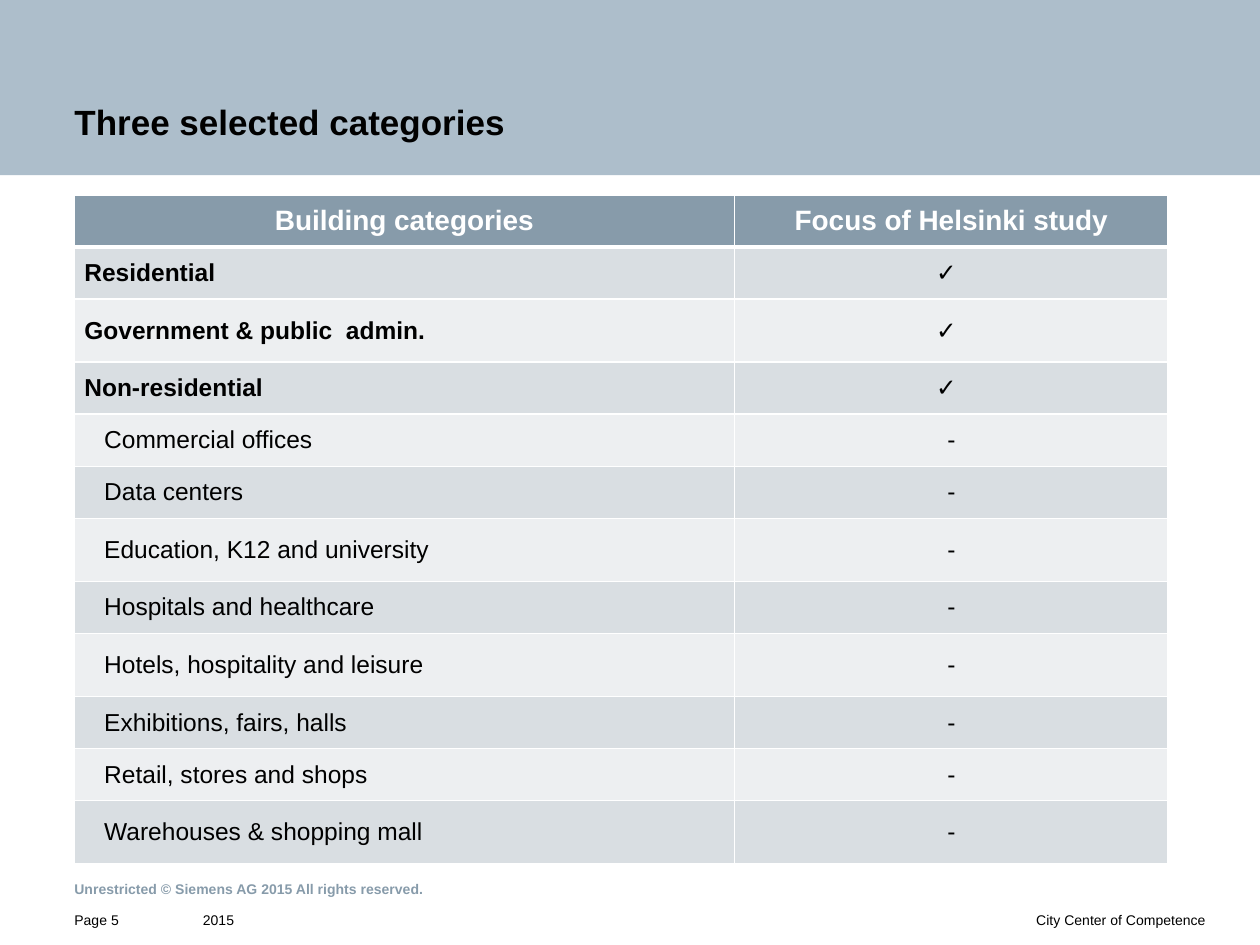
from lxml import etree
from pptx import Presentation
from pptx.dml.color import RGBColor
from pptx.enum.shapes import MSO_SHAPE
from pptx.enum.text import MSO_ANCHOR, MSO_AUTO_SIZE, PP_ALIGN
from pptx.oxml.ns import qn
from pptx.util import Cm, Pt

RECTANGLE = MSO_SHAPE.RECTANGLE
TOP, MIDDLE, BOTTOM = MSO_ANCHOR.TOP, MSO_ANCHOR.MIDDLE, MSO_ANCHOR.BOTTOM
LEFT, CENTER, RIGHT = PP_ALIGN.LEFT, PP_ALIGN.CENTER, PP_ALIGN.RIGHT
NO_AUTOFIT = MSO_AUTO_SIZE.NONE

BLACK = RGBColor(0x00, 0x00, 0x00)
WHITE = RGBColor(0xFF, 0xFF, 0xFF)
BAND = RGBColor(0xAD, 0xBE, 0xCB)
SLATE = RGBColor(0x87, 0x9B, 0xAA)
ROW_DARK = RGBColor(0xD9, 0xDE, 0xE2)
ROW_LIGHT = RGBColor(0xED, 0xEF, 0xF1)


def write_text(frame, text, size=8, color=BLACK, bold=False, align=LEFT,
               indent=0, line_spacing=1.0):
    para = frame.paragraphs[0]
    para.alignment = align
    para.line_spacing = line_spacing
    if indent:
        properties = para._p.get_or_add_pPr()
        properties.set("marL", str(Cm(indent)))
        properties.set("indent", "0")
    span = para.add_run()
    span.text = text
    span.font.name = "Arial"
    span.font.size = Pt(size)
    span.font.bold = bold
    span.font.color.rgb = color


def set_borders(cell, top, bottom):
    properties = cell._tc.get_or_add_tcPr()
    for side, width in (("L", 1), ("R", 1), ("T", top), ("B", bottom)):
        line = etree.SubElement(properties, qn(f"a:ln{side}"), w=str(Pt(width)))
        fill = etree.SubElement(line, qn("a:solidFill"))
        etree.SubElement(fill, qn("a:srgbClr"), val=str(WHITE))


deck = Presentation()
deck.slide_width, deck.slide_height = Cm(25.4), Cm(19.05)
page = deck.slides.add_slide(deck.slide_layouts[5])

# Header band, placed behind the title
band = page.shapes.add_shape(RECTANGLE, 0, 0, Cm(25.4), Cm(3.53))
band.shadow.inherit = False
band.fill.solid()
band.fill.fore_color.rgb = BAND
band.line.fill.background()
page.shapes._spTree.insert(2, band._element)

# Title
title = page.shapes.title
title.left, title.top, title.width, title.height = 0, 0, Cm(25.4), Cm(3.53)
frame = title.text_frame
frame.auto_size = NO_AUTOFIT
frame.word_wrap = True
frame.vertical_anchor = BOTTOM
frame.margin_left, frame.margin_top = Cm(1.5), Cm(1.09)
frame.margin_right, frame.margin_bottom = Cm(5.89), Cm(0.66)
write_text(frame, "Three selected categories", size=20, bold=True)

# Footer: text, (left, top, width, height), (margins l, t, r, b), anchor, format
footers = [
    ("2015", (0, 18.34, 7.87, 0.71), (4.09, 0, 0, 0.33), TOP,
     {"line_spacing": 1.1}),
    ("Unrestricted © Siemens AG 2015 All rights reserved.",
     (0, 17.12, 25.4, 1.19), (1.5, 0.41, 5.89, 0), MIDDLE,
     {"color": SLATE, "bold": True}),
    ("Page 5", (0, 18.34, 3.86, 0.71), (1.5, 0, 0, 0.33), TOP,
     {"line_spacing": 1.1}),
    ("City Center of Competence", (7.49, 18.34, 17.91, 0.71),
     (0, 0, 1.09, 0.33), TOP, {"align": RIGHT, "line_spacing": 1.1}),
]
for text, place, margins, anchor, text_format in footers:
    box = page.shapes.add_textbox(*(Cm(length) for length in place))
    frame = box.text_frame
    frame.word_wrap = True
    frame.vertical_anchor = anchor
    (frame.margin_left, frame.margin_top,
     frame.margin_right, frame.margin_bottom) = (Cm(m) for m in margins)
    write_text(frame, text, **text_format)

# Table: category, focus mark, row height
LOW, HIGH = 1.05, 1.27
rows = [
    ("Building categories", "Focus of Helsinki study", LOW),
    ("Residential", "✓", LOW),
    ("Government & public  admin.", "✓", HIGH),
    ("Non-residential", "✓", LOW),
    ("Commercial offices", "-", LOW),
    ("Data centers", "-", LOW),
    ("Education, K12 and university", "-", HIGH),
    ("Hospitals and healthcare", "-", LOW),
    ("Hotels, hospitality and leisure", "-", HIGH),
    ("Exhibitions, fairs, halls", "-", LOW),
    ("Retail, stores and shops", "-", LOW),
    ("Warehouses & shopping mall", "-", HIGH),
]
table = page.shapes.add_table(len(rows), 2, Cm(1.5), Cm(3.93), Cm(22.05),
                              Cm(sum(row[2] for row in rows))).table
table.columns[0].width, table.columns[1].width = Cm(13.31), Cm(8.74)

for row_index, (category, mark, height) in enumerate(rows):
    table.rows[row_index].height = Cm(height)
    is_header = row_index == 0
    is_group = mark == "✓"
    for column_index, text in enumerate((category, mark)):
        cell = table.cell(row_index, column_index)
        set_borders(cell, top=3 if row_index == 1 else 1,
                    bottom=3 if is_header else 1)
        cell.fill.solid()
        cell.fill.fore_color.rgb = (
            SLATE if is_header else ROW_DARK if row_index % 2 else ROW_LIGHT)
        cell.vertical_anchor = MIDDLE
        cell.margin_left = cell.margin_top = cell.margin_bottom = 0
        cell.margin_right = Cm(0.2) if text == "✓" else 0
        if is_header:
            write_text(cell.text_frame, text, size=16, color=WHITE, bold=True,
                       align=CENTER)
        elif column_index == 0:
            write_text(cell.text_frame, text, size=14, bold=is_group,
                       indent=0.2 if is_group else 0.6)
        else:
            write_text(cell.text_frame, text, size=14, align=CENTER)

deck.save("out.pptx")
